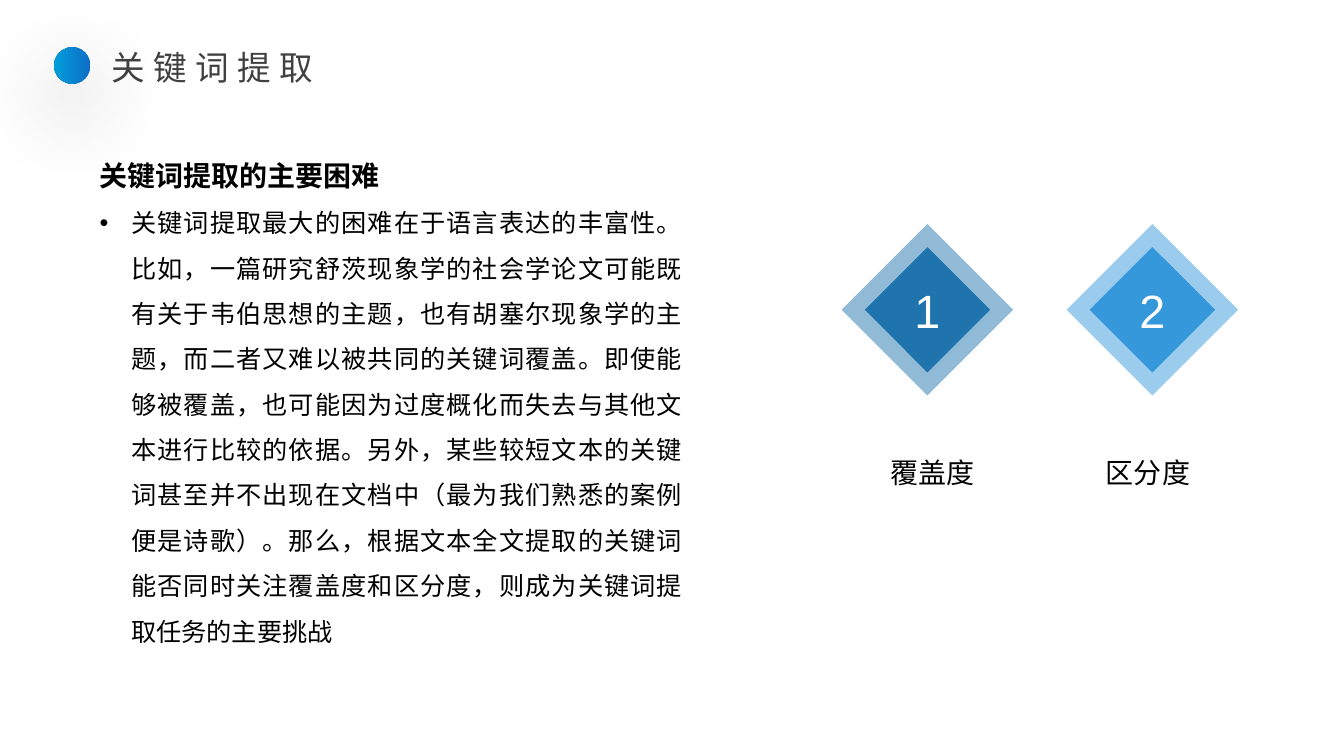
from lxml.etree import SubElement
from pptx import Presentation
from pptx.dml.color import RGBColor
from pptx.enum.shapes import MSO_SHAPE
from pptx.enum.text import MSO_ANCHOR, PP_ALIGN
from pptx.oxml.ns import qn
from pptx.util import Pt

CHINESE_FONT = "Noto Sans CJK SC"
DIFFICULTY = (
    "关键词提取最大的困难在于语言表达的丰富性。比如，一篇研究舒茨现象学的社会学论文可能既"
    "有关于韦伯思想的主题，也有胡塞尔现象学的主题，而二者又难以被共同的关键词覆盖。即使能"
    "够被覆盖，也可能因为过度概化而失去与其他文本进行比较的依据。另外，某些较短文本的关键"
    "词甚至并不出现在文档中（最为我们熟悉的案例便是诗歌）。那么，根据文本全文提取的关键词"
    "能否同时关注覆盖度和区分度，则成为关键词提取任务的主要挑战"
)


def color(hex_string):
    """Turn a hex string into a colour."""
    return RGBColor.from_string(hex_string)


def format_paragraph(paragraph, size, hex_color, font=CHINESE_FONT, bold=False):
    """Format every run of a paragraph, including its East Asian font."""
    for run in paragraph.runs:
        run.font.size = Pt(size)
        run.font.bold = bold
        run.font.name = font
        run.font.color.rgb = color(hex_color)
        SubElement(run.font._element, qn("a:ea"), typeface=font)


def add_text(slide, left, top, width, height, text):
    """Add a wrapping text box and return its text frame."""
    text_frame = slide.shapes.add_textbox(Pt(left), Pt(top), Pt(width), Pt(height)).text_frame
    text_frame.word_wrap = True
    text_frame.text = text
    return text_frame


def add_plain_shape(slide, kind, left, top, size):
    """Add a square-boxed shape without outline or shadow."""
    shape = slide.shapes.add_shape(kind, Pt(left), Pt(top), Pt(size), Pt(size))
    shape.shadow.inherit = False
    shape.line.fill.background()
    return shape


def add_soft_shadow(shape, blur, distance, alpha):
    """Give a shape a blurred black shadow straight below it."""
    effects = shape._element.spPr.find(qn("a:effectLst"))
    shadow = SubElement(effects, qn("a:outerShdw"), blurRad=str(Pt(blur)), dist=str(Pt(distance)),
                        dir="5400000", algn="t", rotWithShape="0")
    black = SubElement(shadow, qn("a:srgbClr"), val="000000")
    SubElement(black, qn("a:alpha"), val=str(alpha * 1000))


def add_heading(slide, left, top, width, height):
    """Place the gradient dot and the spaced slide title."""
    dot = add_plain_shape(slide, MSO_SHAPE.OVAL, left, top + 3.6, 26)
    dot.fill.gradient()
    dot.fill.gradient_angle = 180
    for stop, hex_color in zip(dot.fill.gradient_stops, ("0F6FC6", "009DD9")):
        stop.color.rgb = color(hex_color)
    add_soft_shadow(dot, blur=60, distance=20, alpha=40)

    title = add_text(slide, left + 34, top, width - 34, height, "关键词提取").paragraphs[0]
    title.alignment = PP_ALIGN.JUSTIFY
    format_paragraph(title, 24, "404040")
    for run in title.runs:
        run.font._element.set("spc", "600")


def add_explanation(slide, left, top, width, height):
    """Place the bold subheading and its bulleted explanation."""
    text_frame = add_text(slide, left, top, width, height, f"关键词提取的主要困难\n{DIFFICULTY}")
    subheading, explanation = text_frame.paragraphs
    for paragraph in (subheading, explanation):
        paragraph.alignment = PP_ALIGN.JUSTIFY
        paragraph.line_spacing = 1.5
    format_paragraph(subheading, 20, "000000", bold=True)
    format_paragraph(explanation, 18, "000000")

    properties = explanation._element.get_or_add_pPr()
    properties.set("marL", str(Pt(22.5)))
    properties.set("indent", str(-Pt(22.5)))
    SubElement(properties, qn("a:buFont"), typeface="Arial")
    SubElement(properties, qn("a:buChar"), char="•")


def add_diamond(slide, left, top, size, number, hex_color):
    """Place a numbered diamond inside a translucent one."""
    outer = add_plain_shape(slide, MSO_SHAPE.DIAMOND, left, top, size)
    outer.fill.solid()
    outer.fill.fore_color.rgb = color(hex_color)
    tint = outer._element.spPr.find(qn("a:solidFill")).find(qn("a:srgbClr"))
    SubElement(tint, qn("a:alpha"), val="49000")

    margin = 16.5
    inner = add_plain_shape(slide, MSO_SHAPE.DIAMOND, left + margin, top + margin, size - 2 * margin)
    inner.fill.solid()
    inner.fill.fore_color.rgb = color(hex_color)
    text_frame = inner.text_frame
    text_frame.margin_left = text_frame.margin_right = 0
    text_frame.margin_top = text_frame.margin_bottom = 0
    text_frame.vertical_anchor = MSO_ANCHOR.MIDDLE
    text_frame.text = number
    text_frame.paragraphs[0].alignment = PP_ALIGN.CENTER
    format_paragraph(text_frame.paragraphs[0], 33.3, "FFFFFF", font="Arial")


def add_criteria(slide, left, top):
    """Place the two numbered criteria side by side with their labels."""
    criteria = (("覆盖度", "1F74AD", 28), ("区分度", "3498DB", 21))
    for index, (label, hex_color, label_offset) in enumerate(criteria):
        diamond_left = left + index * 160.7
        add_diamond(slide, diamond_left, top, 122.5, str(index + 1), hex_color)
        text_frame = add_text(slide, diamond_left + label_offset, top + 162, 132, 32, label)
        format_paragraph(text_frame.paragraphs[0], 20, "000000")


def main():
    """Build and save the slide."""
    presentation = Presentation()
    presentation.slide_width = Pt(960)
    presentation.slide_height = Pt(540)
    slide = presentation.slides.add_slide(presentation.slide_layouts[6])
    add_heading(slide, 38.7, 30.2, 521, 36)
    add_explanation(slide, 64, 98, 430.6, 371)
    add_criteria(slide, 601.2, 160)
    presentation.save("out.pptx")


if __name__ == "__main__":
    main()
